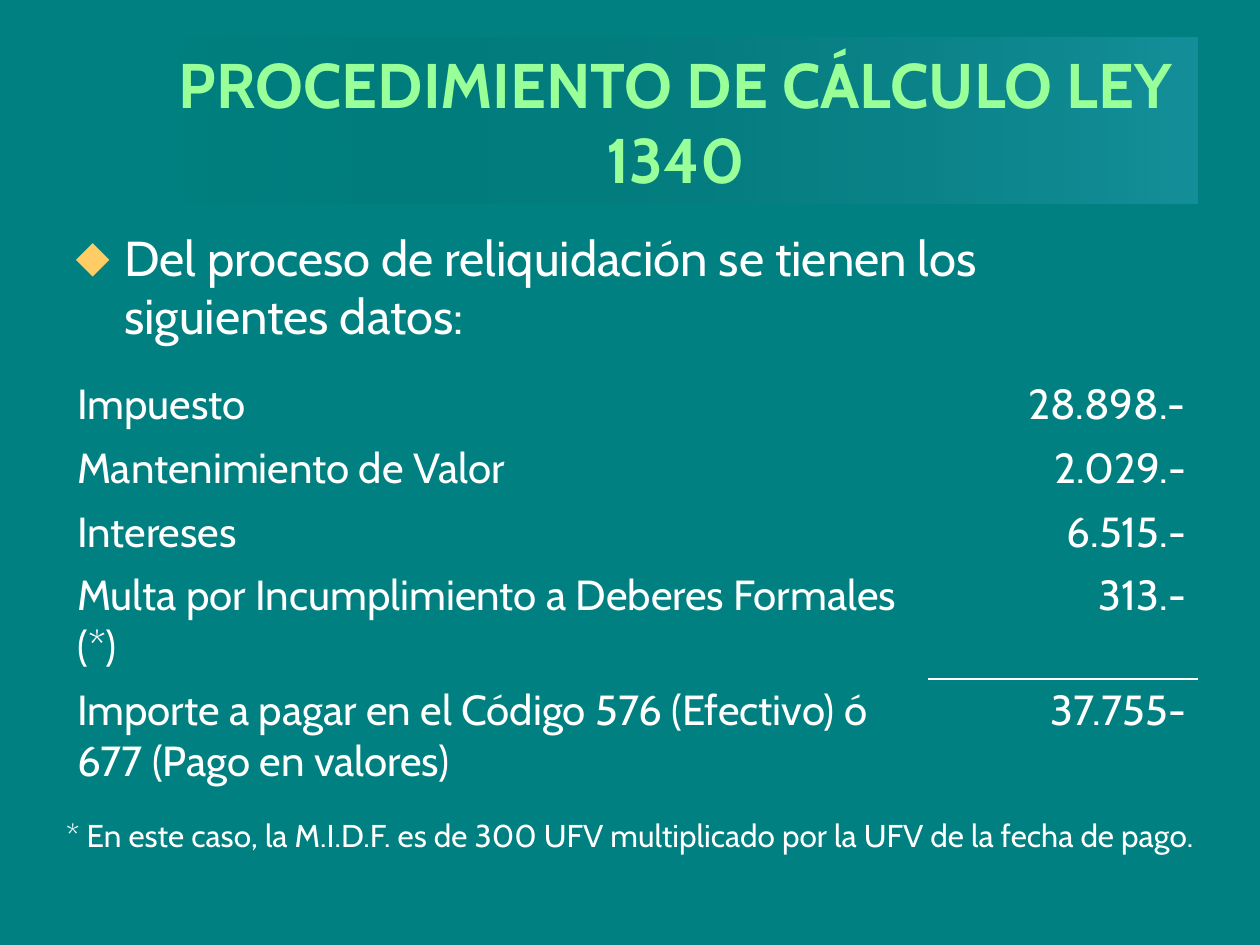
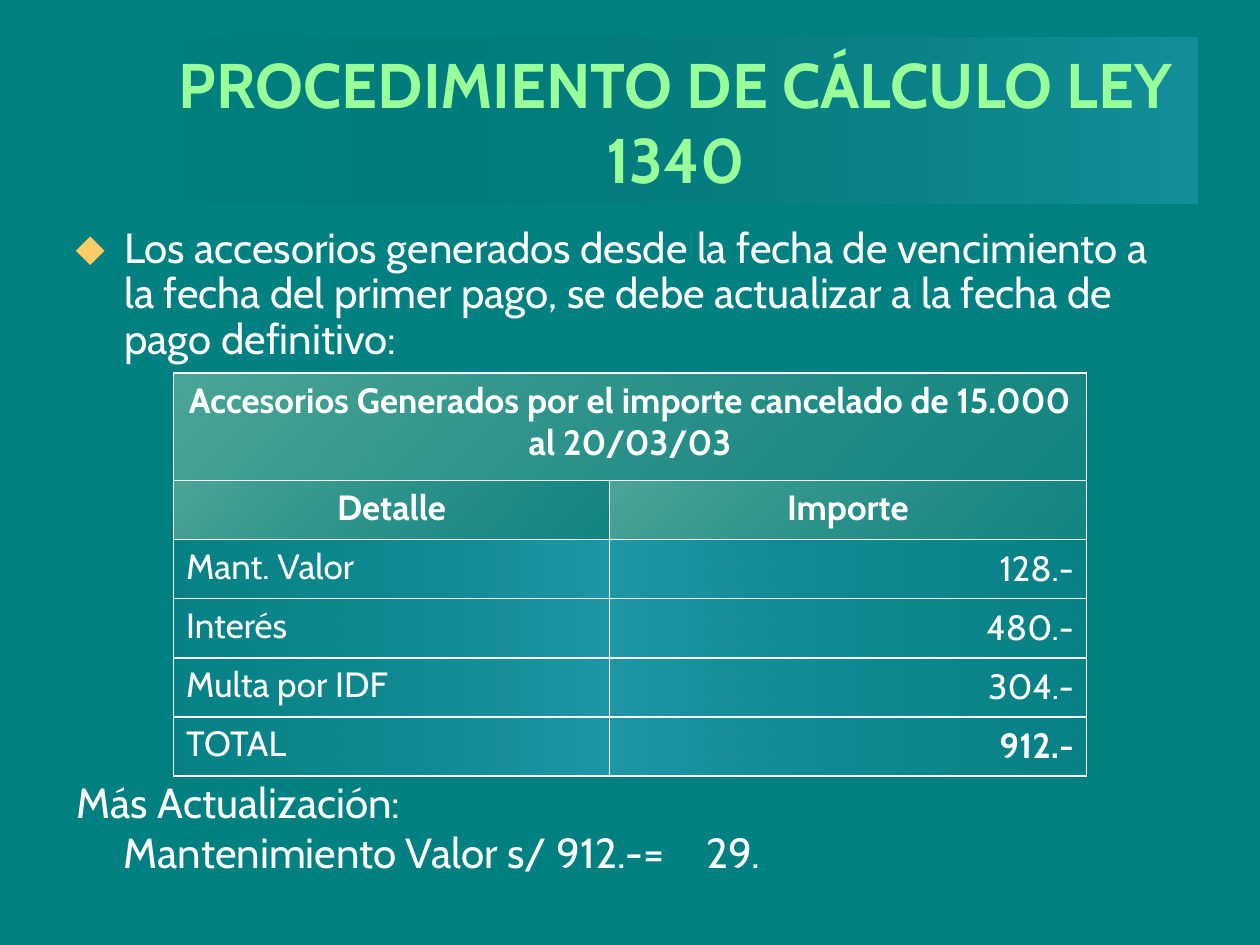
from dataclasses import dataclass

import pptx
import pptx.dml.color
import pptx.enum.text
import pptx.oxml
import pptx.oxml.ns
import pptx.util
from pptx.util import Cm

FONT = "Cabin"
TITLE = "PROCEDIMIENTO DE CÁLCULO LEY 1340"
HUES = {
    "back": "008080",
    "title": "99FF99",
    "text": "FFFFFF",
    "mark": "FFCC66",
    "black": "000000",
    "sky": "66CCFF",
    "steel": "4992B6",
    "cream": "FFFFCC",
    "sand": "B6B692",
}
BARE = "{2D5ABB26-0587-4C30-8999-92F81FD0307C}"  # table style without grid
SIDES = ("lnL", "lnR", "lnT", "lnB")
ALIGN = pptx.enum.text.PP_ALIGN
ANCHOR = pptx.enum.text.MSO_ANCHOR
qn = pptx.oxml.ns.qn


@dataclass(frozen=True)
class Box:
    """Place and size in centimetres."""
    left: float
    top: float
    width: float
    height: float

    def dims(self) -> tuple:
        return Cm(self.left), Cm(self.top), Cm(self.width), Cm(self.height)


@dataclass(frozen=True)
class Style:
    size: float
    hue: str = "text"
    bold: bool = False
    align: ALIGN = ALIGN.LEFT


@dataclass(frozen=True)
class Blend:
    """Gradient: each end is a colour name and its opacity in percent."""
    start: tuple
    end: tuple
    angle: float = 0


@dataclass(frozen=True)
class Grid:
    left: float
    top: float
    cols: tuple
    rows: tuple


BAND = Blend(("black", 0), ("sky", 20))
HEAD = Blend(("cream", 30), ("sand", 10), 45)
RISE = Blend(("steel", 10), ("sky", 30))
FALL = Blend(("sky", 30), ("steel", 10))


def color(name: str) -> pptx.dml.color.RGBColor:
    return pptx.dml.color.RGBColor.from_string(HUES[name])


def add_xml(parent, markup: str, spot=None) -> None:
    node = pptx.oxml.parse_xml(
        markup.replace(" ", f" {pptx.oxml.ns.nsdecls('a')} ", 1))
    parent.insert(len(parent) if spot is None else spot, node)


def write(para, text: str, style: Style) -> None:
    para.text = text
    para.alignment = style.align
    for run in para.runs:
        run.font.name = FONT
        run.font.size = pptx.util.Pt(style.size)
        run.font.bold = style.bold
        run.font.color.rgb = color(style.hue)


def shade(fill, props, blend: Blend) -> None:
    fill.gradient()
    fill.gradient_angle = -blend.angle % 360
    ends = (blend.start, blend.end)
    for stop, (name, _) in zip(fill.gradient_stops, ends):
        stop.color.rgb = color(name)
    tints = props.find(qn("a:gradFill")).iter(qn("a:srgbClr"))
    for tint, (_, alpha) in zip(tints, ends):
        add_xml(tint, f'<a:alpha val="{alpha * 1000}"/>')


def place(shape, box: Box) -> None:
    shape.left, shape.top, shape.width, shape.height = box.dims()
    shape.text_frame.word_wrap = True
    shape.text_frame.auto_size = pptx.enum.text.MSO_AUTO_SIZE.NONE


def add_slide(deck, lead: str, size: float, height: float, pitch: float):
    """Slide with the shared title band and one bulleted lead."""
    slide = deck.slides.add_slide(deck.slide_layouts[1])
    title, body = slide.placeholders
    place(title, Box(3.1, 0.76, 21.03, 3.35))
    title.text_frame.vertical_anchor = ANCHOR.MIDDLE
    shade(title.fill, title._element.spPr, BAND)
    write(title.text_frame.paragraphs[0], TITLE,
          Style(36, "title", True, ALIGN.CENTER))

    place(body, Box(1.27, 4.45, 22.86, height))
    para = body.text_frame.paragraphs[0]
    write(para, lead, Style(size))
    para.line_spacing = pitch
    para.space_before = pptx.util.Pt(0)
    props = para._p.get_or_add_pPr()
    props.set("marL", str(Cm(0.98)))
    props.set("indent", str(-Cm(0.98)))
    add_xml(props, f'<a:buClr ><a:srgbClr val="{HUES["mark"]}"/></a:buClr>')
    add_xml(props, f'<a:buFont typeface="{FONT}"/>')
    add_xml(props, '<a:buChar char="⬥"/>')
    return slide


def add_table(slide, grid: Grid):
    box = Box(grid.left, grid.top, sum(grid.cols), sum(grid.rows))
    frame = slide.shapes.add_table(
        len(grid.rows), len(grid.cols), *box.dims())
    table = frame.table
    table.first_row = table.horz_banding = False
    table._tbl.tblPr.find(qn("a:tableStyleId")).text = BARE
    for col, width in zip(table.columns, grid.cols):
        col.width = Cm(width)
    for row, height in zip(table.rows, grid.rows):
        row.height = Cm(height)
    return table


def edge(cell, sides: tuple) -> None:
    props = cell._tc.get_or_add_tcPr()
    for spot, side in enumerate(sides):
        add_xml(props, f'<a:{side} w="12700"><a:solidFill><a:srgbClr '
                f'val="{HUES["text"]}"/></a:solidFill></a:{side}>', spot)


def add_text(slide, box: Box, lines: tuple, style: Style) -> list:
    shape = slide.shapes.add_textbox(*box.dims())
    frame = shape.text_frame
    place(shape, box)
    for i, line in enumerate(lines):
        para = frame.add_paragraph() if i else frame.paragraphs[0]
        write(para, line, style)
    return list(frame.paragraphs)


def build_sums(deck) -> None:
    slide = add_slide(
        deck, "Del proceso de reliquidación se tienen los siguientes datos:",
        28, 2.69, 1.0)
    sums = (
        ("Impuesto", "28.898.-"),
        ("Mantenimiento de Valor", "2.029.-"),
        ("Intereses", "6.515.-"),
        ("Multa por Incumplimiento a Deberes Formales (*)", "313.-"),
        ("Importe a pagar en el Código 576 (Efectivo) ó "
         "677 (Pago en valores)", "37.755-"),
    )
    table = add_table(slide, Grid(1.3, 7.52, (17.4, 5.46),
                                  (1.28,) * 3 + (2.3,) * 2))
    for r, pair in enumerate(sums):
        for c, text in enumerate(pair):
            cell = table.cell(r, c)
            cell.fill.background()
            write(cell.text_frame.paragraphs[0], text,
                  Style(24, align=ALIGN.RIGHT if c else ALIGN.LEFT))
    # Rule above the total
    edge(table.cell(3, 1), ("lnB",))
    edge(table.cell(4, 1), ("lnT",))
    add_text(slide, Box(0, 16.33, 25.4, 1.02),
             ("* En este caso, la M.I.D.F. es de 300 UFV multiplicado "
              "por la UFV de la fecha de pago.",),
             Style(18, align=ALIGN.CENTER))


def build_extras(deck) -> None:
    slide = add_slide(
        deck, "Los accesorios generados desde la fecha de vencimiento a la "
        "fecha del primer pago, se debe actualizar a la fecha de pago "
        "definitivo:", 24, 3.07, 0.9)
    extras = (
        ("Accesorios Generados por el importe cancelado de 15.000 "
         "al 20/03/03", ""),
        ("Detalle", "Importe"),
        ("Mant. Valor", "128.-"),
        ("Interés", "480.-"),
        ("Multa por IDF", "304.-"),
        ("TOTAL", "912.-"),
    )
    table = add_table(slide, Grid(3.5, 7.52, (8.79, 9.61),
                                  (2.17,) + (1.19,) * 5))
    table.cell(0, 0).merge(table.cell(0, 1))
    last = len(extras) - 1
    for r, pair in enumerate(extras):
        for c, text in enumerate(pair):
            cell = table.cell(r, c)
            head = r < 2
            blend = HEAD if head else (RISE, FALL)[c]
            shade(cell.fill, cell._tc.get_or_add_tcPr(), blend)
            edge(cell, SIDES)
            if c and not head:
                cell.vertical_anchor = ANCHOR.MIDDLE
            align = ALIGN.CENTER if head else (ALIGN.LEFT, ALIGN.RIGHT)[c]
            if text:
                bold = head or (r, c) == (last, 1)
                write(cell.text_frame.paragraphs[0], text,
                      Style(20, bold=bold, align=align))

    # Update line, its parts set on tab stops
    _, para = add_text(
        slide, Box(1.3, 15.52, 22.81, 2.29),
        ("Más Actualización:", "Mantenimiento Valor s/ 912.-\t=\t29."),
        Style(24))
    props = para._p.get_or_add_pPr()
    props.set("marL", "0")
    props.set("indent", str(Cm(0.95)))
    tabs = "".join(f'<a:tab pos="{Cm(stop)}" algn="l"/>'
                   for stop in (12.7, 15.24))
    add_xml(props, f"<a:tabLst >{tabs}</a:tabLst>")


def main() -> None:
    deck = pptx.Presentation()
    deck.slide_width, deck.slide_height = Cm(25.4), Cm(19.05)
    back = deck.slide_master.background.fill
    back.solid()
    back.fore_color.rgb = color("back")
    build_sums(deck)
    build_extras(deck)
    deck.save("out.pptx")


if __name__ == "__main__":
    main()
